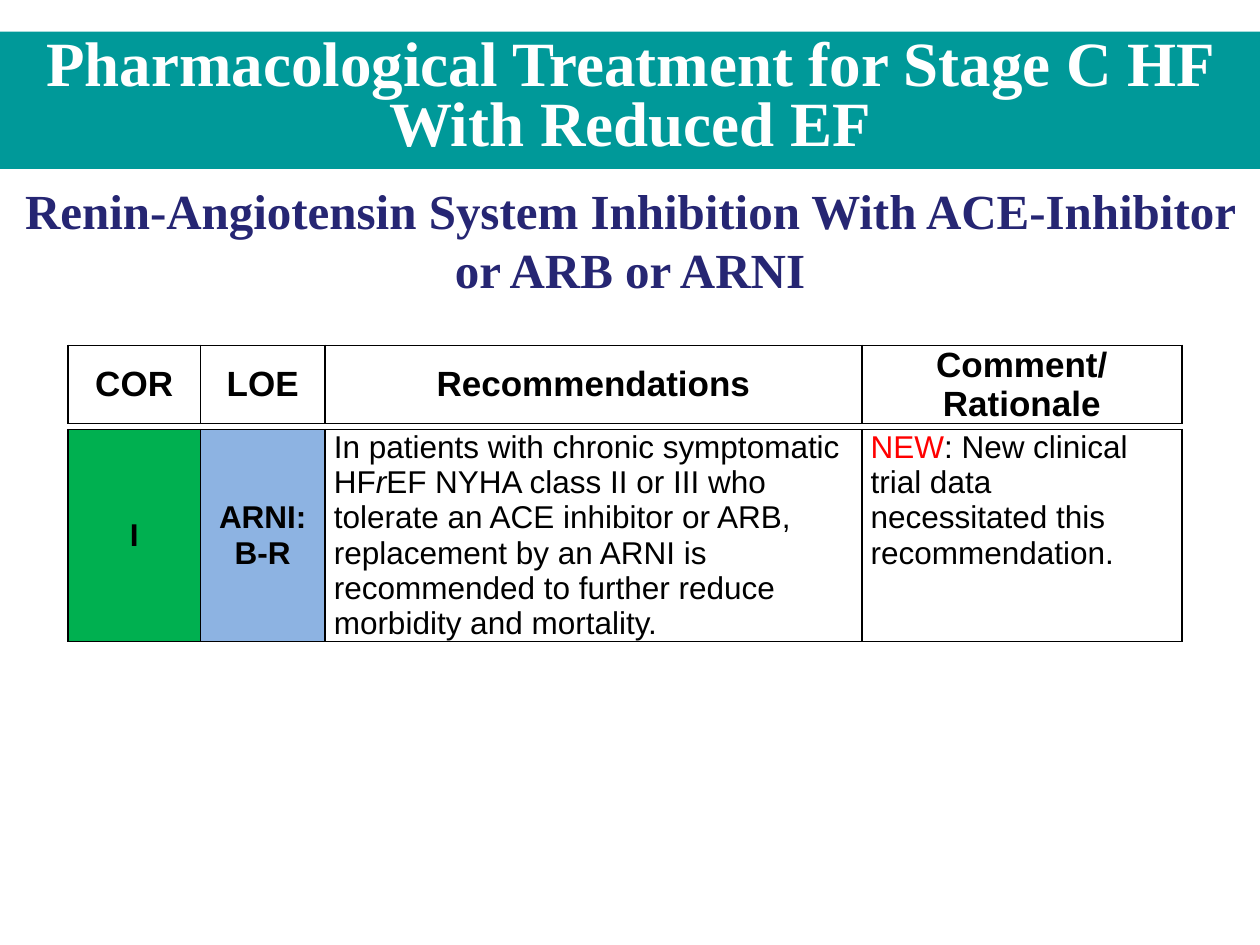
from lxml import etree
from pptx import Presentation
from pptx.dml.color import RGBColor
from pptx.enum.shapes import MSO_SHAPE
from pptx.enum.text import MSO_ANCHOR, PP_ALIGN
from pptx.oxml.ns import qn
from pptx.util import Inches, Pt

RECT = MSO_SHAPE.RECTANGLE
TOP, MIDDLE = MSO_ANCHOR.TOP, MSO_ANCHOR.MIDDLE
LEFT, CENTER = PP_ALIGN.LEFT, PP_ALIGN.CENTER
COLORS = {
    "teal": "009999", "white": "FFFFFF", "navy": "262673", "black": "000000",
    "green": "00B050", "blue": "8DB3E2", "red": "FF0000",
}


class SlideBuilder:
    heading_font = "Times New Roman"
    table_font = "Arial"
    table_left, table_widths = 0.54, (1.05, 0.99, 4.26, 2.54)

    def __init__(self, prs):
        self.s = prs.slides.add_slide(prs.slide_layouts[6])

    def rgb(self, color):
        return RGBColor.from_string(COLORS[color])

    def runs(self, p, runs, color="black", **fmt):
        for text, extra in runs:
            r = p.add_run()
            r.text = text
            values = {"color": color, **fmt, **extra}
            r.font.color.rgb = self.rgb(values.pop("color"))
            for name, value in values.items():
                setattr(r.font, name, value)

    def banner(self, top, height, text, fill, color, size, anchor, spacing=1.0):
        sp = self.s.shapes.add_shape(RECT, 0, Inches(top), Inches(10), Inches(height))
        sp.shadow.inherit = False
        sp.fill.solid()
        sp.fill.fore_color.rgb = self.rgb(fill)
        sp.line.fill.background()
        tf = sp.text_frame
        tf.word_wrap = True
        tf.vertical_anchor = anchor
        p = tf.paragraphs[0]
        p.alignment = CENTER
        p.line_spacing = spacing
        self.runs(p, [(text, {})], color, name=self.heading_font, size=Pt(size), bold=True)

    def borders(self, cell):
        tc_pr = cell._tc.get_or_add_tcPr()
        for i, side in enumerate(("a:lnL", "a:lnR", "a:lnT", "a:lnB")):
            ln = etree.Element(qn(side), w=str(Pt(1)))
            fill = etree.SubElement(ln, qn("a:solidFill"))
            etree.SubElement(fill, qn("a:srgbClr"), val=COLORS["black"])
            tc_pr.insert(i, ln)

    def cell(self, cell, size, paragraphs, bold=True, fill=None):
        margins = {"margin_left": 0.07, "margin_right": 0.07, "margin_top": 0, "margin_bottom": 0}
        for name, value in margins.items():
            setattr(cell, name, Inches(value))
        cell.vertical_anchor = MIDDLE if bold else TOP
        if fill:
            cell.fill.solid()
            cell.fill.fore_color.rgb = self.rgb(fill)
        else:
            cell.fill.background()
        self.borders(cell)
        tf = cell.text_frame
        for i, runs in enumerate(paragraphs):
            p = tf.add_paragraph() if i else tf.paragraphs[0]
            p.alignment = CENTER if bold else LEFT
            self.runs(p, runs, name=self.table_font, size=Pt(size), bold=bold)

    def table(self, top, height, size, cells):
        frame = self.s.shapes.add_table(
            1, len(cells), Inches(self.table_left), Inches(top),
            Inches(sum(self.table_widths)), Inches(height))
        table = frame.table
        table.first_row = table.horz_banding = False
        for i, (width, content) in enumerate(zip(self.table_widths, cells)):
            table.columns[i].width = Inches(width)
            self.cell(table.cell(0, i), size, **content)


def main():
    prs = Presentation()
    prs.slide_width, prs.slide_height = Inches(10), Inches(7.5)
    slide = SlideBuilder(prs)
    slide.banner(0.25, 1.09, "Pharmacological Treatment for Stage C HF With Reduced EF",
                 "teal", "white", 36, TOP, 0.8)
    slide.banner(1.4, 1, "Renin-Angiotensin System Inhibition With ACE-Inhibitor or ARB or ARNI",
                 "white", "navy", 28, MIDDLE)
    headers = (["COR"], ["LOE"], ["Recommendations"], ["Comment/", "Rationale"])
    slide.table(2.74, 0.62, 20, [
        {"paragraphs": [[(line, {})] for line in lines]} for lines in headers])
    slide.table(3.41, 1.67, 18, [
        {"paragraphs": [[("I", {})]], "fill": "green"},
        {"paragraphs": [[("ARNI: B-R", {})]], "fill": "blue"},
        {"paragraphs": [[
            ("In patients with chronic symptomatic HF", {}),
            ("r", {"italic": True}),
            ("EF NYHA class II or III who tolerate an ACE inhibitor or ARB, replacement by an "
             "ARNI is recommended to further reduce morbidity and mortality.", {}),
        ]], "bold": False},
        {"paragraphs": [[
            ("NEW", {"color": "red"}),
            (": New clinical trial data necessitated this recommendation.", {}),
        ]], "bold": False},
    ])
    prs.save("out.pptx")


if __name__ == "__main__":
    main()
